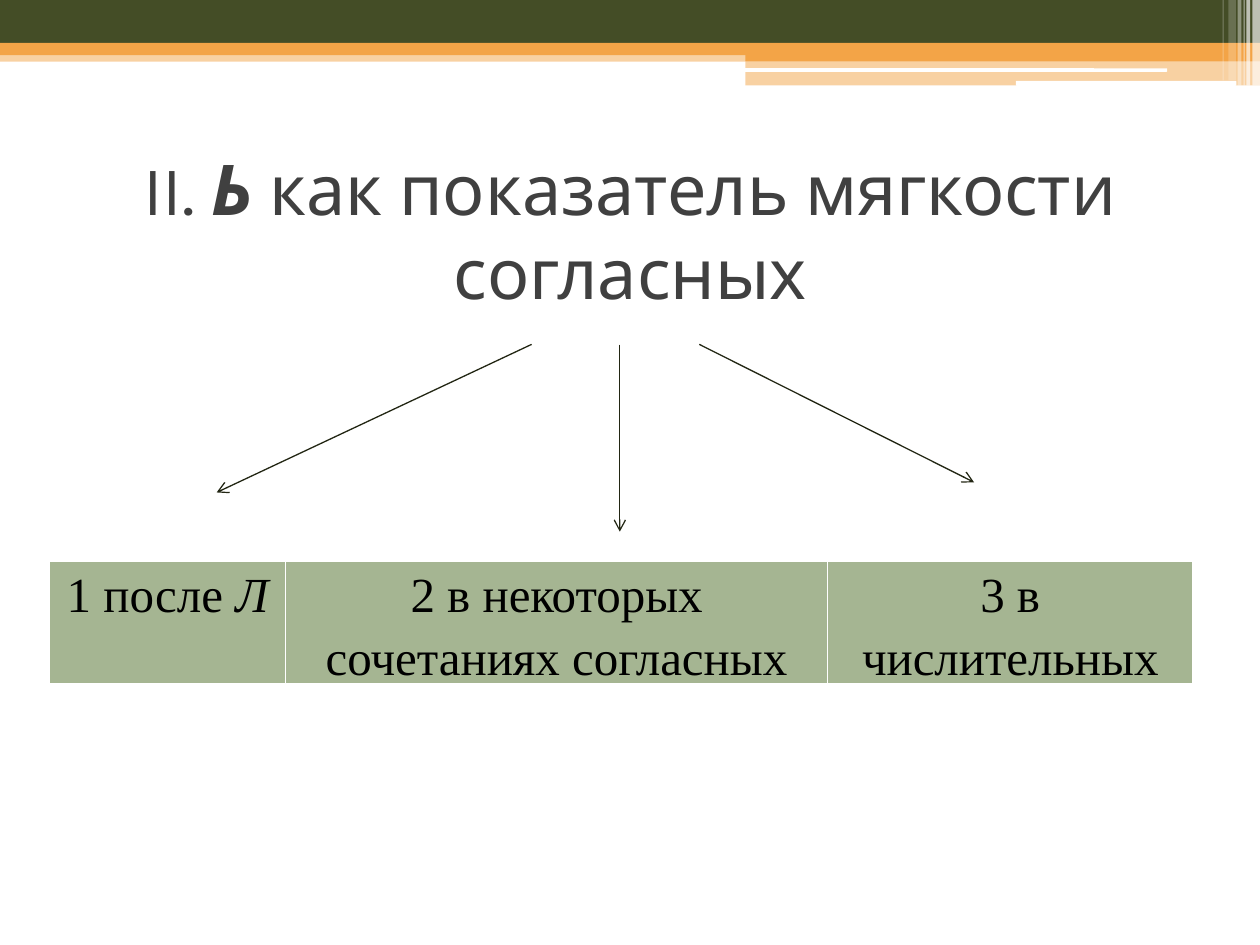
from typing import NamedTuple

import pptx
import pptx.dml.color
import pptx.enum.shapes
import pptx.enum.text
import pptx.oxml
import pptx.oxml.ns
import pptx.util

Pt = pptx.util.Pt
qn = pptx.oxml.ns.qn
ShapeType = pptx.enum.shapes.MSO_SHAPE
Align = pptx.enum.text.PP_ALIGN
NAMESPACE = pptx.oxml.ns.nsdecls("a")

DARK_GREEN, ORANGE, WHITE = "444D26", "F3A447", "FFFFFF"
SAGE, TITLE_GRAY, ARROW_COLOR, BLACK = "A5B592", "404040", "222613", "000000"


class Bar(NamedTuple):
    left: float
    top: float
    width: float
    height: float
    color: str
    opacity: int = 100
    rounded: bool = False


class Arrow(NamedTuple):
    start_x: float
    start_y: float
    end_x: float
    end_y: float


class Piece(NamedTuple):
    text: str
    bold: bool = False
    italic: bool = False


class Column(NamedTuple):
    width: float
    pieces: list[Piece]


BARS = [
    Bar(0, 28.8, 720, 6.5, ORANGE, 50),
    Bar(0, 0, 720, 24.5, DARK_GREEN),
    Bar(0, 24.5, 720, 7, ORANGE),
    Bar(426, 28, 294, 6.8, ORANGE),
    Bar(426, 34.8, 294, 14, ORANGE, 50),
    Bar(425.5, 39, 241.5, 2, WHITE, rounded=True),
    Bar(580.5, 46.2, 126, 2.8, WHITE, rounded=True),
    Bar(715.6, 0, 4.4, 49, WHITE, 65),
    Bar(712.2, 0, 2.2, 49, WHITE, 65),
    Bar(710.6, 0, 0.7, 49, WHITE, 60),
    Bar(707.2, 0, 2.2, 49, WHITE, 40),
    Bar(702, 0, 4.3, 46, WHITE, 20),
    Bar(698.6, 0, 0.7, 46, WHITE, 30),
]
ARROWS = [
    Arrow(303.8, 196.8, 123.8, 281.4),
    Arrow(354.2, 197, 354.2, 303.8),
    Arrow(399.6, 196.8, 556.6, 275.6),
]
TITLE = [Piece("II. "), Piece("Ь", True, True), Piece(" как показатель мягкости согласных")]
COLUMNS = [
    Column(135, [Piece("1 после "), Piece("Л", italic=True)]),
    Column(309.5, [Piece("2 в некоторых сочетаниях согласных")]),
    Column(209, [Piece("3 в числительных")]),
]


def rgb(color: str) -> pptx.dml.color.RGBColor:
    return pptx.dml.color.RGBColor.from_string(color)


def write(paragraph, pieces: list[Piece], font_name: str, size: float, color: str) -> None:
    paragraph.alignment = Align.CENTER
    paragraph.font.name = font_name
    paragraph.font.size = Pt(size)
    paragraph.font.color.rgb = rgb(color)
    for piece in pieces:
        run = paragraph.add_run()
        run.text = piece.text
        run.font.bold = piece.bold
        run.font.italic = piece.italic


def draw_bar(slide, bar: Bar) -> None:
    kind = ShapeType.ROUNDED_RECTANGLE if bar.rounded else ShapeType.RECTANGLE
    shape = slide.shapes.add_shape(
        kind, Pt(bar.left), Pt(bar.top), Pt(bar.width), Pt(bar.height))
    shape.shadow.inherit = False
    shape.line.fill.background()
    shape.fill.solid()
    shape.fill.fore_color.rgb = rgb(bar.color)
    if bar.opacity < 100:
        color_element = shape._element.spPr.find(".//" + qn("a:srgbClr"))
        color_element.append(pptx.oxml.parse_xml(
            f'<a:alpha {NAMESPACE} val="{bar.opacity * 1000}"/>'))


def draw_arrow(slide, arrow: Arrow) -> None:
    connector = slide.shapes.add_connector(
        pptx.enum.shapes.MSO_CONNECTOR.STRAIGHT,
        Pt(arrow.start_x), Pt(arrow.start_y), Pt(arrow.end_x), Pt(arrow.end_y))
    connector.line.color.rgb = rgb(ARROW_COLOR)
    connector.line.width = Pt(0.75)
    connector.line._get_or_add_ln().append(
        pptx.oxml.parse_xml(f'<a:tailEnd {NAMESPACE} type="arrow"/>'))
    connector._element.spPr.append(pptx.oxml.parse_xml(f"<a:effectLst {NAMESPACE}/>"))


def format_cell(cell, pieces: list[Piece]) -> None:
    cell.margin_left = cell.margin_right = Pt(5)
    cell.margin_top = cell.margin_bottom = 0
    cell.fill.solid()
    cell.fill.fore_color.rgb = rgb(SAGE)
    paragraph = cell.text_frame.paragraphs[0]
    paragraph.line_spacing = 1.15
    write(paragraph, pieces, "Times New Roman", 28, BLACK)
    # Borders come before the fill in the cell properties
    properties = cell._tc.get_or_add_tcPr()
    for index, (side, width) in enumerate([("L", 1), ("R", 1), ("T", 1), ("B", 3)]):
        properties.insert(index, pptx.oxml.parse_xml(
            f'<a:ln{side} {NAMESPACE} w="{Pt(width)}"><a:solidFill>'
            f'<a:srgbClr val="{WHITE}"/></a:solidFill></a:ln{side}>'))


def draw_table(slide, columns: list[Column]) -> None:
    total_width = sum(column.width for column in columns)
    table = slide.shapes.add_table(
        1, len(columns), Pt(28.3), Pt(320.6), Pt(total_width), Pt(69.5)).table
    table.first_row = table.horz_banding = False
    for index, column in enumerate(columns):
        table.columns[index].width = Pt(column.width)
        format_cell(table.cell(0, index), column.pieces)


def format_title(title) -> None:
    title.left, title.top, title.width, title.height = Pt(36), Pt(67.7), Pt(648), Pt(174.2)
    frame = title.text_frame
    frame.word_wrap = True
    frame.auto_size = pptx.enum.text.MSO_AUTO_SIZE.NONE
    frame.vertical_anchor = pptx.enum.text.MSO_ANCHOR.MIDDLE
    frame.margin_bottom = Pt(51)
    write(frame.paragraphs[0], TITLE, "Karla", 40, TITLE_GRAY)


def main() -> None:
    presentation = pptx.Presentation()
    presentation.slide_width, presentation.slide_height = Pt(720), Pt(540)
    slide = presentation.slides.add_slide(presentation.slide_layouts[5])

    # Header band
    for bar in BARS:
        draw_bar(slide, bar)

    # Title, three cases and the arrows leading to them
    format_title(slide.shapes.title)
    draw_table(slide, COLUMNS)
    for arrow in ARROWS:
        draw_arrow(slide, arrow)

    presentation.save("out.pptx")


if __name__ == "__main__":
    main()
